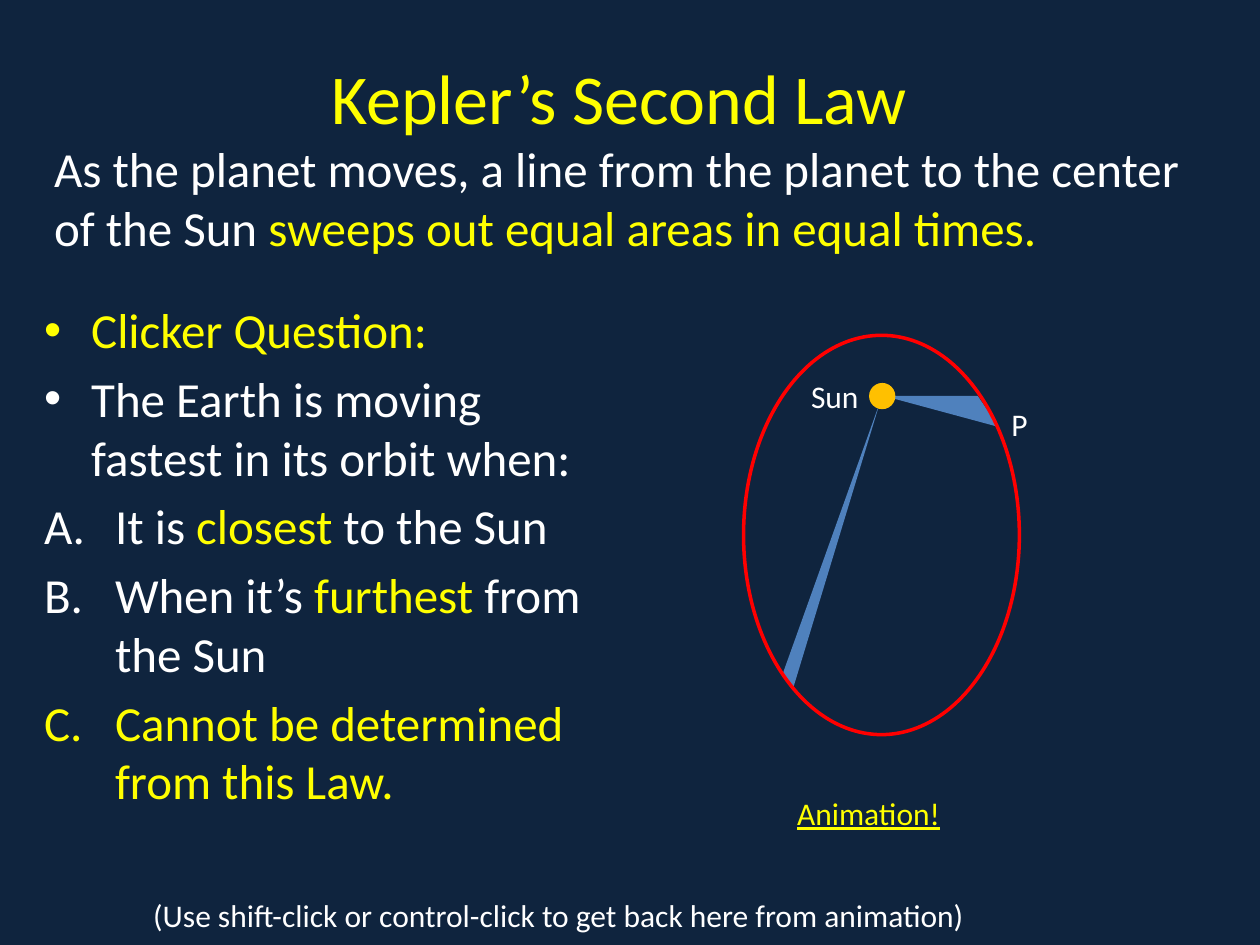
"""Build the slide on Kepler's second law with its orbit sketch and quiz question."""
import pptx
import pptx.dml.color
import pptx.enum.shapes
import pptx.enum.text
import pptx.oxml
import pptx.oxml.ns
import pptx.util

Cm = pptx.util.Cm
Pt = pptx.util.Pt
RGBColor = pptx.dml.color.RGBColor
OVAL = pptx.enum.shapes.MSO_SHAPE.OVAL

NAVY = RGBColor(0x0F, 0x24, 0x3E)
WHITE = RGBColor(0xFF, 0xFF, 0xFF)
YELLOW = RGBColor(0xFF, 0xFF, 0x00)
RED = RGBColor(0xFF, 0x00, 0x00)
BLUE = RGBColor(0x4F, 0x81, 0xBD)
GOLD = RGBColor(0xFF, 0xC0, 0x00)


def add_frame(left, top, width, height):
    box = slide.shapes.add_textbox(Cm(left), Cm(top), Cm(width), Cm(height))
    box.text_frame.word_wrap = True
    return box.text_frame


def add_runs(paragraph, size, runs):
    for text, color in runs:
        run = paragraph.add_run()
        run.text = text
        run.font.name = "Calibri"
        run.font.size = Pt(size)
        run.font.color.rgb = color


presentation = pptx.Presentation()
presentation.slide_width = Cm(25.4)
presentation.slide_height = Cm(19.05)
slide = presentation.slides.add_slide(presentation.slide_layouts[6])
slide.background.fill.solid()
slide.background.fill.fore_color.rgb = NAVY

swept_areas = [
    [(16, 13.84), (15.77, 13.61), (17.75, 8.08)],
    [(17.81, 7.98), (19.71, 7.98), (20.14, 8.61)],
]
for corners in swept_areas:
    start, *others = [(Cm(x), Cm(y)) for x, y in corners]
    outline = slide.shapes.build_freeform(*start)
    outline.add_line_segments(others, close=True)
    wedge = outline.convert_to_shape()
    wedge.shadow.inherit = False
    wedge.fill.solid()
    wedge.fill.fore_color.rgb = BLUE
    wedge.line.fill.background()

heading = add_frame(0.84, 0.76, 23.29, 4.75)
heading.vertical_anchor = pptx.enum.text.MSO_ANCHOR.MIDDLE
law_name = heading.paragraphs[0]
law_name.alignment = pptx.enum.text.PP_ALIGN.CENTER
add_runs(law_name, 40, [("Kepler’s Second Law", YELLOW)])
add_runs(heading.add_paragraph(), 28, [
    ("As the planet moves, a line from the planet to the center of the Sun ", WHITE),
    ("sweeps out equal areas in equal times.", YELLOW),
])

BULLET = ("buChar", 'char="•"', 0.95)
LETTER = ("buAutoNum", 'type="alphaUcPeriod"', 1.43)
question_lines = [
    (BULLET, [("Clicker Question:", YELLOW)]),
    (BULLET, [("The Earth is moving fastest in its orbit when:", WHITE)]),
    (LETTER, [("It is ", WHITE), ("closest", YELLOW), (" to the Sun", WHITE)]),
    (LETTER, [("When it’s ", WHITE), ("furthest", YELLOW), (" from the Sun", WHITE)]),
    (LETTER, [("Cannot be determined from this Law.", YELLOW)]),
]
question = add_frame(0.64, 5.92, 11.86, 11.1)
for index, ((tag, kind, indent), runs) in enumerate(question_lines):
    line = question.add_paragraph() if index else question.paragraphs[0]
    line.space_before = Pt(5.6)
    properties = line._p.get_or_add_pPr()
    properties.set("marL", str(Cm(indent)))
    properties.set("indent", str(-Cm(indent)))
    namespace = pptx.oxml.ns.nsdecls("a")
    properties.append(pptx.oxml.parse_xml(f'<a:buFont {namespace} typeface="Arial"/>'
                                          if tag == "buChar" else
                                          f'<a:buFont {namespace} typeface="Calibri"/>'))
    properties.append(pptx.oxml.parse_xml(f"<a:{tag} {namespace} {kind}/>"))
    add_runs(line, 28, runs)

orbit = slide.shapes.add_shape(OVAL, Cm(14.99), Cm(6.76), Cm(5.56), Cm(8.05))
orbit.shadow.inherit = False
orbit.fill.background()
orbit.line.color.rgb = RED
orbit.line.width = Pt(2)

sun = slide.shapes.add_shape(OVAL, Cm(17.52), Cm(7.72), Cm(0.53), Cm(0.53))
sun.shadow.inherit = False
sun.fill.solid()
sun.fill.fore_color.rgb = GOLD
sun.line.fill.background()

captions = [
    ("P", 20.14, 8.05, 1.47, WHITE),
    ("Sun", 16.1, 7.47, 2.06, WHITE),
    ("Animation!", 15.82, 15.88, 3.61, YELLOW),
    ("(Use shift-click or control-click to get back here from animation)",
     2.84, 17.93, 20.12, WHITE),
]
for text, left, top, width, color in captions:
    caption = add_frame(left, top, width, 1.02).paragraphs[0]
    add_runs(caption, 18, [(text, color)])
    if color == YELLOW:
        caption.runs[0].font.underline = True

presentation.save("out.pptx")
